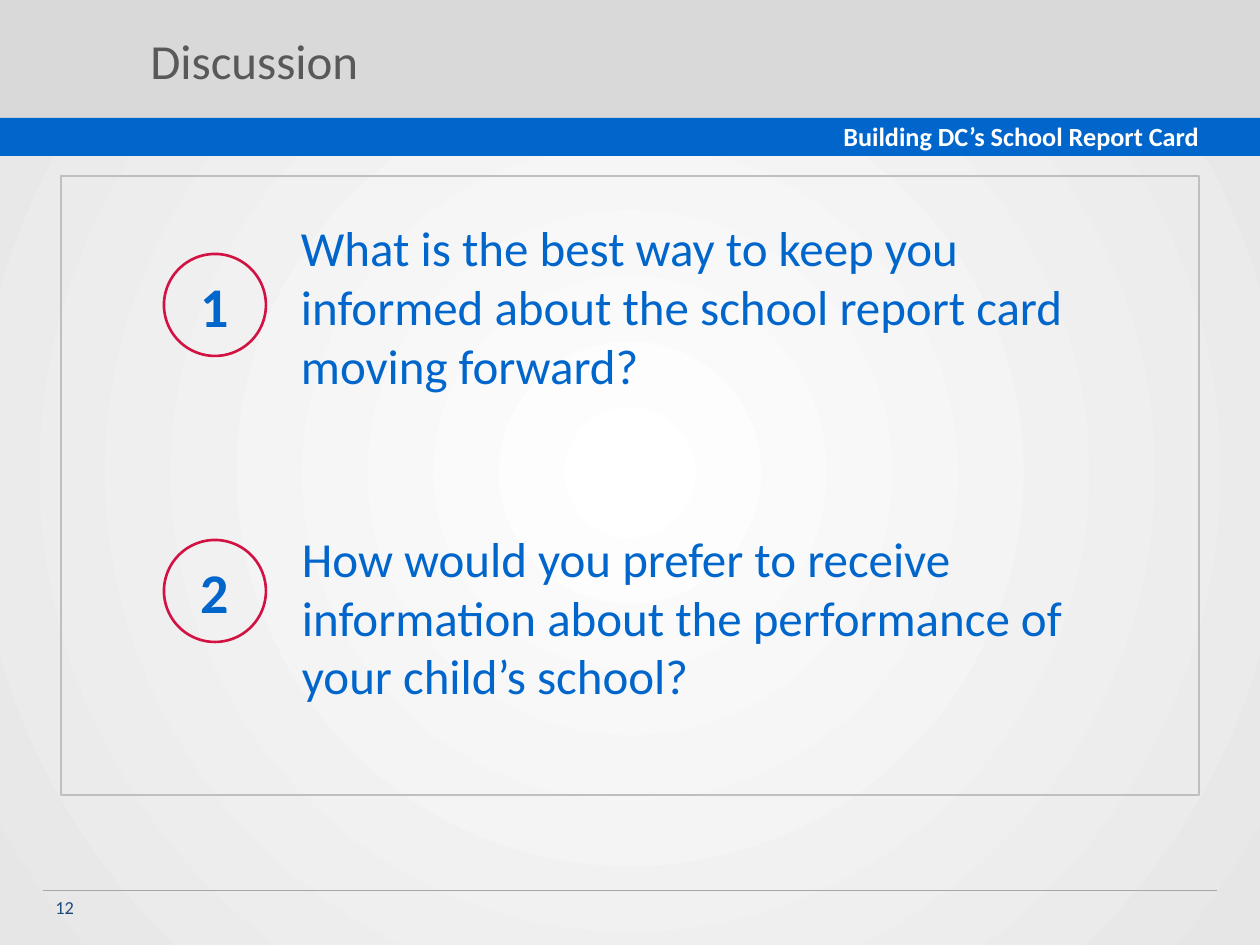
from lxml import etree
from pptx import Presentation
from pptx.dml.color import RGBColor
from pptx.enum.shapes import MSO_CONNECTOR, MSO_SHAPE
from pptx.enum.text import MSO_ANCHOR, PP_ALIGN
from pptx.oxml.ns import qn
from pptx.util import Emu, Pt

RECT, OVAL = MSO_SHAPE.RECTANGLE, MSO_SHAPE.OVAL
STRAIGHT = MSO_CONNECTOR.STRAIGHT
TOP, MIDDLE = MSO_ANCHOR.TOP, MSO_ANCHOR.MIDDLE
LEFT, CENTER = PP_ALIGN.LEFT, PP_ALIGN.CENTER

WHITE = RGBColor(0xFF, 0xFF, 0xFF)
PALE = RGBColor(0xE6, 0xE6, 0xE6)
LIGHT = RGBColor(0xD9, 0xD9, 0xD9)
SILVER = RGBColor(0xBF, 0xBF, 0xBF)
GRAY = RGBColor(0xA6, 0xA6, 0xA6)
DARK = RGBColor(0x59, 0x59, 0x59)
BLUE = RGBColor(0x00, 0x66, 0xCC)
NAVY = RGBColor(0x1F, 0x49, 0x7D)
RED = RGBColor(0xD1, 0x12, 0x42)

FONT = "Calibri"
SCALE = 914400 // 126
WIDTH, HEIGHT = 1260, 945

# Number, top of its circle, box of its question
ITEMS = [
    ("1", 254, (295, 267, 810, 78),
     "What is the best way to keep you informed about the school "
     "report card moving forward?"),
    ("2", 540, (296, 483, 810, 267),
     "How would you prefer to receive information about the "
     "performance of your child’s school?"),
]


def px(*nums):
    return [Emu(n * SCALE) for n in nums]


def paint_back(slide):
    """Fill the background with a gradient that spreads from the centre."""
    fill = slide.background.fill
    fill.gradient()
    for stop, color in zip(fill.gradient_stops, (WHITE, PALE)):
        stop.color.rgb = color
    lin = next(slide.element.iter(qn("a:lin")))
    ring = etree.Element(qn("a:path"), path="circle")
    sides = dict.fromkeys("ltrb", "50000")
    etree.SubElement(ring, qn("a:fillToRect"), sides)
    lin.getparent().replace(lin, ring)


def add_shape(slide, kind, box, fill=None, line=None, weight=1):
    shape = slide.shapes.add_shape(kind, *px(*box))
    shape.shadow.inherit = False
    if fill is None:
        shape.fill.background()
    else:
        shape.fill.solid()
        shape.fill.fore_color.rgb = fill
    if line is None:
        shape.line.fill.background()
    else:
        shape.line.color.rgb = line
        shape.line.width = Pt(weight)
    return shape


def set_text(shape, text, size, color, bold=False, align=LEFT,
             anchor=TOP, inset=None, before=0):
    frame = shape.text_frame
    frame.word_wrap = True
    frame.vertical_anchor = anchor
    if inset is not None:
        pad = px(inset)[0]
        frame.margin_left = frame.margin_right = pad
        frame.margin_top = frame.margin_bottom = pad
    para = frame.paragraphs[0]
    para.text = text
    para.alignment = align
    para.space_before = Pt(before)
    para.font.name = FONT
    para.font.size = Pt(size)
    para.font.bold = bold
    para.font.color.rgb = color


def add_text(slide, box, text, size, color, **style):
    shape = slide.shapes.add_textbox(*px(*box))
    set_text(shape, text, size, color, **style)


def add_rule(slide, left, right, top):
    rule = slide.shapes.add_connector(STRAIGHT, *px(left, top, right, top))
    rule.line.color.rgb = GRAY
    rule.line.width = Pt(0.25)
    etree.SubElement(rule.element.spPr, qn("a:effectLst"))


def add_item(slide, num, top, box, text):
    """Add a circled number and the question beside it."""
    ring = add_shape(slide, OVAL, (164, top, 102, 102), line=RED, weight=1.5)
    set_text(ring, num, 32, BLUE, bold=True, align=CENTER,
             anchor=MIDDLE, inset=12)
    add_text(slide, box, text, 28, BLUE, anchor=MIDDLE, inset=6, before=2)


def main():
    deck = Presentation()
    deck.slide_width, deck.slide_height = px(WIDTH, HEIGHT)
    slide = deck.slides.add_slide(deck.slide_layouts[6])
    paint_back(slide)
    add_shape(slide, RECT, (0, 0, WIDTH, 127), fill=LIGHT)
    add_rule(slide, 43, 1217, 890)
    add_shape(slide, RECT, (0, 118, WIDTH, 38), fill=BLUE)
    add_text(slide, (831, 114, 429, 44), "Building DC’s School Report Card",
             15, WHITE, bold=True)
    add_text(slide, (138, 15, 1090, 90), "Discussion", 28, DARK,
             anchor=MIDDLE)
    for item in ITEMS:
        add_item(slide, *item)
    add_text(slide, (43, 890, 294, 50), "12", 10.5, NAVY)
    add_shape(slide, RECT, (61, 176, 1138, 619), line=SILVER)
    deck.save("out.pptx")


if __name__ == "__main__":
    main()
